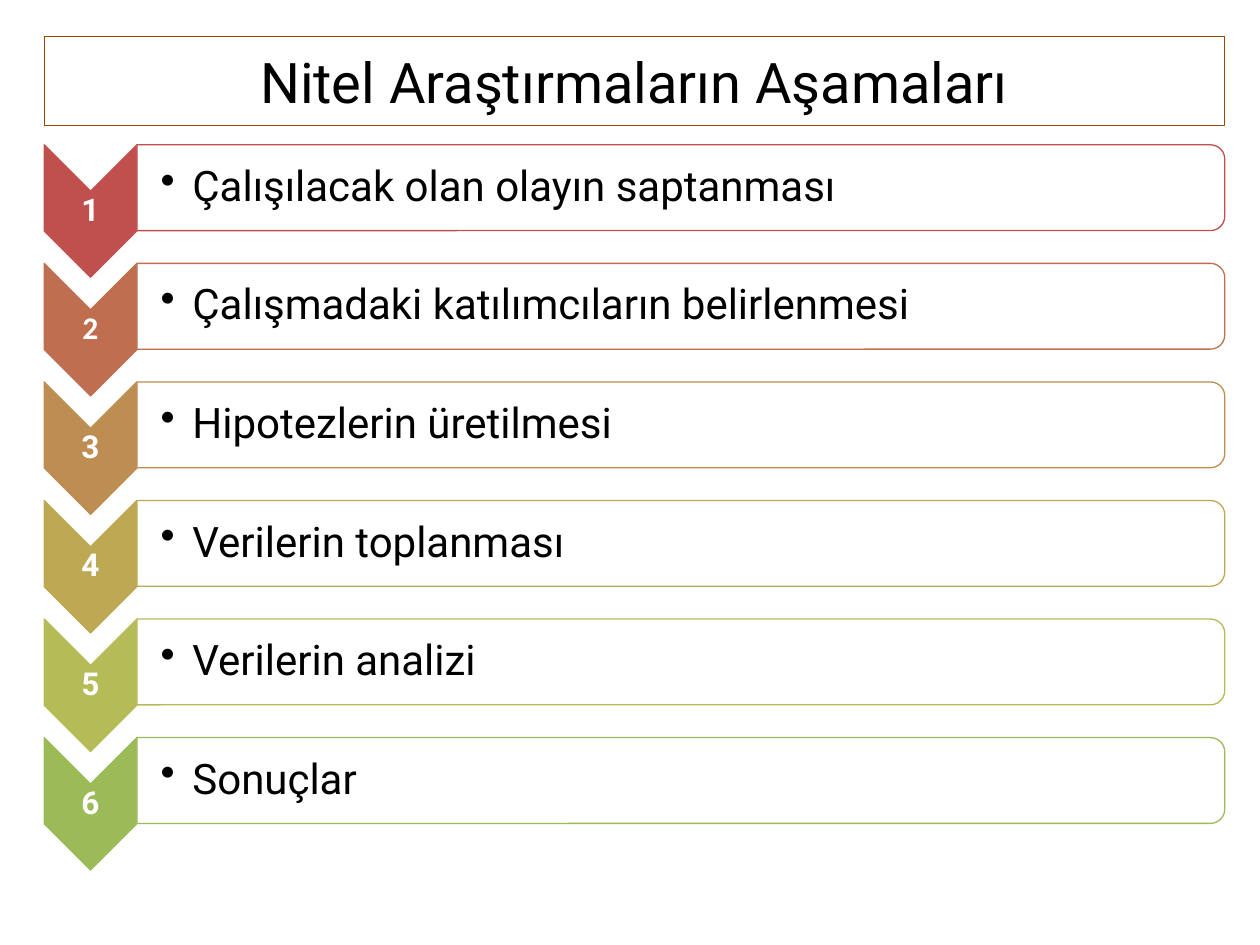
from dataclasses import dataclass

from lxml.etree import SubElement
from pptx import Presentation
from pptx.dml.color import RGBColor
from pptx.enum.shapes import MSO_SHAPE as Shape
from pptx.enum.text import MSO_ANCHOR as Anchor, MSO_AUTO_SIZE as AutoSize, PP_ALIGN as Align
from pptx.oxml.ns import qn
from pptx.util import Cm, Pt

TITLE = "Nitel Araştırmaların Aşamaları"
# step text, colour, font of its number
STEPS = [
    ("Çalışılacak olan olayın saptanması", "C0504D", "Roboto"),
    ("Çalışmadaki katılımcıların belirlenmesi", "BF6F4F", "Calibri"),
    ("Hipotezlerin üretilmesi", "BE8D52", "Roboto"),
    ("Verilerin toplanması", "BDA954", "Roboto"),
    ("Verilerin analizi", "B5BC57", "Roboto"),
    ("Sonuçlar", "9BBB59", "Roboto"),
]


@dataclass(frozen=True)
class Theme:
    font: str = "Roboto"
    ink: str = "000000"
    paper: str = "FFFFFF"
    title_line: str = "984807"
    title_size: int = 32
    step_size: int = 24
    number_size: int = 18
    line_width: float = 0.75


THEME = Theme()

# All lengths in centimetres
LEFT, WIDTH = 0.89, 23.8
TITLE_TOP, TITLE_HEIGHT = 0.73, 1.8
CHEVRON_WIDTH, CHEVRON_HEIGHT = 1.87, 2.67
BAR_HEIGHT = 1.73
BAR_LEFT, BAR_WIDTH = LEFT + CHEVRON_WIDTH, WIDTH - CHEVRON_WIDTH
STEPS_TOP, PITCH = 2.92, 2.39
NUMBER_HEIGHT, STEP_TEXT_HEIGHT = 0.8, 1.56
INDENT = 0.64


def color(value):
    return RGBColor.from_string(value)


def style_line(shape, value):
    shape.line.color.rgb = color(value)
    shape.line.width = Pt(THEME.line_width)


def style_text(para, size, value, font=THEME.font, bold=False):
    for span in para.runs:
        span.font.name = font
        span.font.size = Pt(size)
        span.font.bold = bold
        span.font.color.rgb = color(value)


def add_turned(shapes, kind, left, top, width, height, fill, line):
    """Add a shape turned by 90 degrees that covers the given upright area."""
    shift = (width - height) / 2
    shape = shapes.add_shape(kind, Cm(left + shift), Cm(top - shift), Cm(height), Cm(width))
    shape.rotation = 90
    shape.shadow.inherit = False
    shape.fill.solid()
    shape.fill.fore_color.rgb = color(fill)
    style_line(shape, line)
    return shape


def add_label(shapes, text, left, middle, width, height, margin, left_margin):
    box = shapes.add_textbox(Cm(left), Cm(middle - height / 2), Cm(width), Cm(height))
    frame = box.text_frame
    frame.word_wrap = True
    frame.vertical_anchor = Anchor.MIDDLE
    frame.margin_top = frame.margin_bottom = frame.margin_right = Cm(margin)
    frame.margin_left = Cm(left_margin)
    frame.text = text
    para = frame.paragraphs[0]
    para.line_spacing = 0.9
    return para


def add_bullet(para):
    para.level = 1
    props = para._p.get_or_add_pPr()
    props.set("marL", str(Cm(INDENT)))
    props.set("indent", str(-Cm(INDENT)))
    SubElement(props, qn("a:buChar")).set("char", "•")


def add_title(page):
    title = page.shapes.title
    title.left, title.top = Cm(LEFT), Cm(TITLE_TOP)
    title.width, title.height = Cm(WIDTH), Cm(TITLE_HEIGHT)
    style_line(title, THEME.title_line)
    frame = title.text_frame
    frame.text = TITLE
    frame.auto_size = AutoSize.NONE
    frame.vertical_anchor = Anchor.MIDDLE
    para = frame.paragraphs[0]
    para.alignment = Align.CENTER
    style_text(para, THEME.title_size, THEME.ink)


def add_step(shapes, index, text, accent, number_font):
    top = STEPS_TOP + index * PITCH
    add_turned(shapes, Shape.CHEVRON, LEFT, top, CHEVRON_WIDTH, CHEVRON_HEIGHT, accent, accent)
    number = add_label(shapes, str(index + 1), LEFT, top + CHEVRON_HEIGHT / 2,
                       CHEVRON_WIDTH, NUMBER_HEIGHT, 0.03, 0.03)
    number.alignment = Align.CENTER
    style_text(number, THEME.number_size, THEME.paper, number_font, bold=True)

    bar = add_turned(shapes, Shape.ROUND_2_SAME_RECTANGLE, BAR_LEFT, top, BAR_WIDTH, BAR_HEIGHT,
                     THEME.paper, accent)
    fill_color = bar._element.spPr.find(qn("a:solidFill"))[0]
    SubElement(fill_color, qn("a:alpha")).set("val", "90000")
    step = add_label(shapes, text, BAR_LEFT, top + BAR_HEIGHT / 2,
                     BAR_WIDTH, STEP_TEXT_HEIGHT, 0.04, 0.48)
    add_bullet(step)
    style_text(step, THEME.step_size, THEME.ink)


def main():
    deck = Presentation()
    deck.slide_width, deck.slide_height = Cm(25.4), Cm(19.05)
    page = deck.slides.add_slide(deck.slide_layouts[5])
    add_title(page)
    steps = page.shapes.add_group_shape()
    for index, (text, accent, number_font) in enumerate(STEPS):
        add_step(steps.shapes, index, text, accent, number_font)
    deck.save("out.pptx")


if __name__ == "__main__":
    main()
